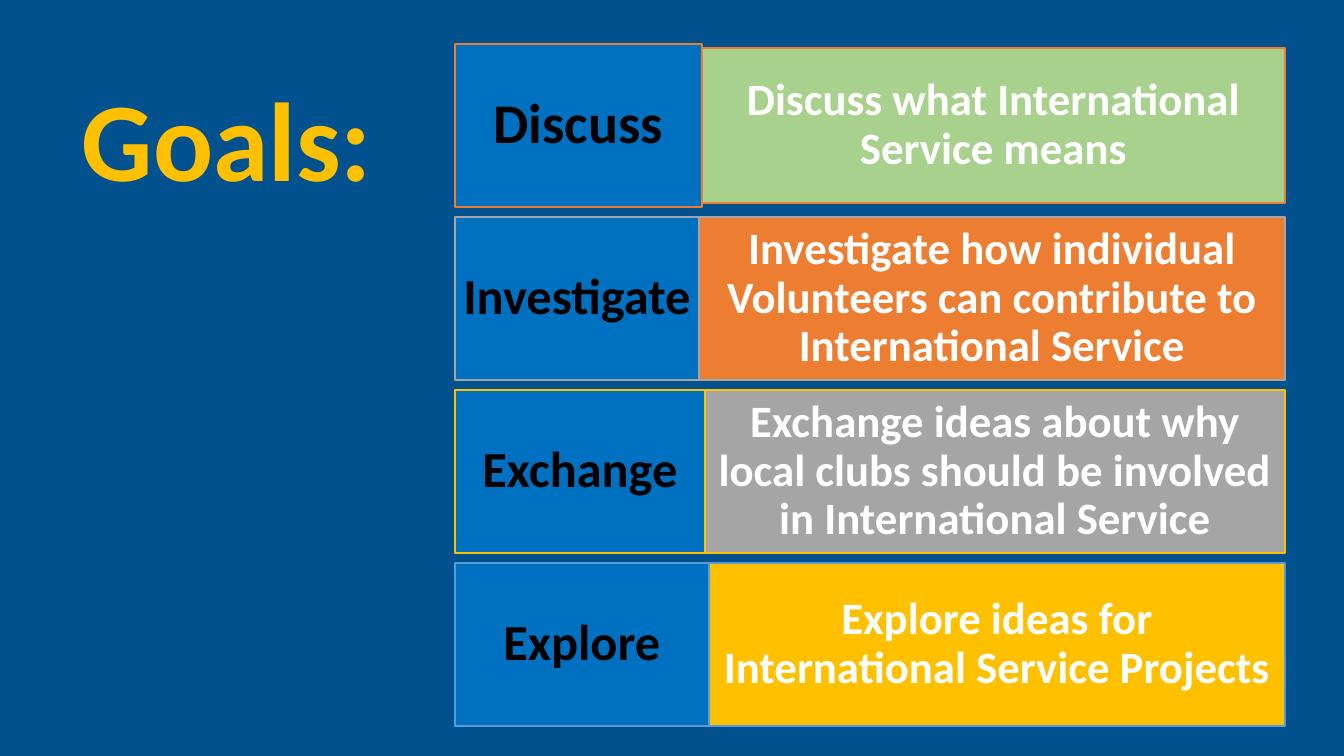
import pptx
import pptx.dml.color
import pptx.enum.shapes
import pptx.enum.text
import pptx.util

PX = 914400 / 100.8
LEFT, RIGHT = 455, 1285
TOP, ROW_H, PITCH = 44, 163, 173

# verb, verb size, verb width, goal, goal fill, line, goal inset from row top and bottom
GOALS = [
    ("Discuss", 40, 247, "Discuss what International Service means",
     "A9D18E", "ED7D31", 4),
    ("Investigate", 36, 244,
     "Investigate how individual Volunteers can contribute to International Service",
     "ED7D31", "A5A5A5", 0),
    ("Exchange", 36, 250,
     "Exchange ideas about why local clubs should be involved in International Service",
     "A5A5A5", "FFC000", 0),
    ("Explore", 36, 254, "Explore ideas for International Service Projects",
     "FFC000", "5B9BD5", 0),
]


def px(n):
    return pptx.util.Emu(round(n * PX))


def rgb(hex_color):
    return pptx.dml.color.RGBColor.from_string(hex_color)


def set_text(sp, text, size, color, align, inset):
    """Write one bold Calibri paragraph, centred vertically."""
    tf = sp.text_frame
    frame = {
        "word_wrap": True,
        "vertical_anchor": pptx.enum.text.MSO_ANCHOR.MIDDLE,
        "margin_left": px(inset),
        "margin_right": px(inset),
        "margin_top": 0,
        "margin_bottom": 0,
    }
    for name, value in frame.items():
        setattr(tf, name, value)
    p = tf.paragraphs[0]
    p.alignment = align
    p.line_spacing = 0.9
    r = p.add_run()
    r.text = text
    font = {"name": "Calibri", "size": pptx.util.Pt(size), "bold": True}
    for name, value in font.items():
        setattr(r.font, name, value)
    r.font.color.rgb = rgb(color)


def add_title(s, text):
    sp = s.shapes.add_textbox(px(58), px(85), px(324), px(121))
    set_text(sp, text, 80, "FFC000", pptx.enum.text.PP_ALIGN.RIGHT, 10)


def add_box(s, x, y, w, h, fill, line, text, size, color, inset):
    sp = s.shapes.add_shape(pptx.enum.shapes.MSO_SHAPE.RECTANGLE,
                            px(x), px(y), px(w), px(h))
    sp.shadow.inherit = False
    sp.fill.solid()
    sp.fill.fore_color.rgb = rgb(fill)
    sp.line.color.rgb = rgb(line)
    sp.line.width = pptx.util.Pt(1)
    set_text(sp, text, size, color, pptx.enum.text.PP_ALIGN.CENTER, inset)


def main():
    prs = pptx.Presentation()
    prs.slide_width, prs.slide_height = px(1344), px(756)
    s = prs.slides.add_slide(prs.slide_layouts[6])
    s.background.fill.solid()
    s.background.fill.fore_color.rgb = rgb("00518E")

    add_title(s, "Goals:")
    for i, (verb, size, width, goal, fill, line, trim) in enumerate(GOALS):
        y = TOP + i * PITCH
        split = LEFT + width
        add_box(s, split, y + trim, RIGHT - split, ROW_H - 2 * trim,
                fill, line, goal, 32, "FFFFFF", 11)
        add_box(s, LEFT, y, width, ROW_H,
                "0070C0", line, verb, size, "000000", 7)
    prs.save("out.pptx")


if __name__ == "__main__":
    main()
